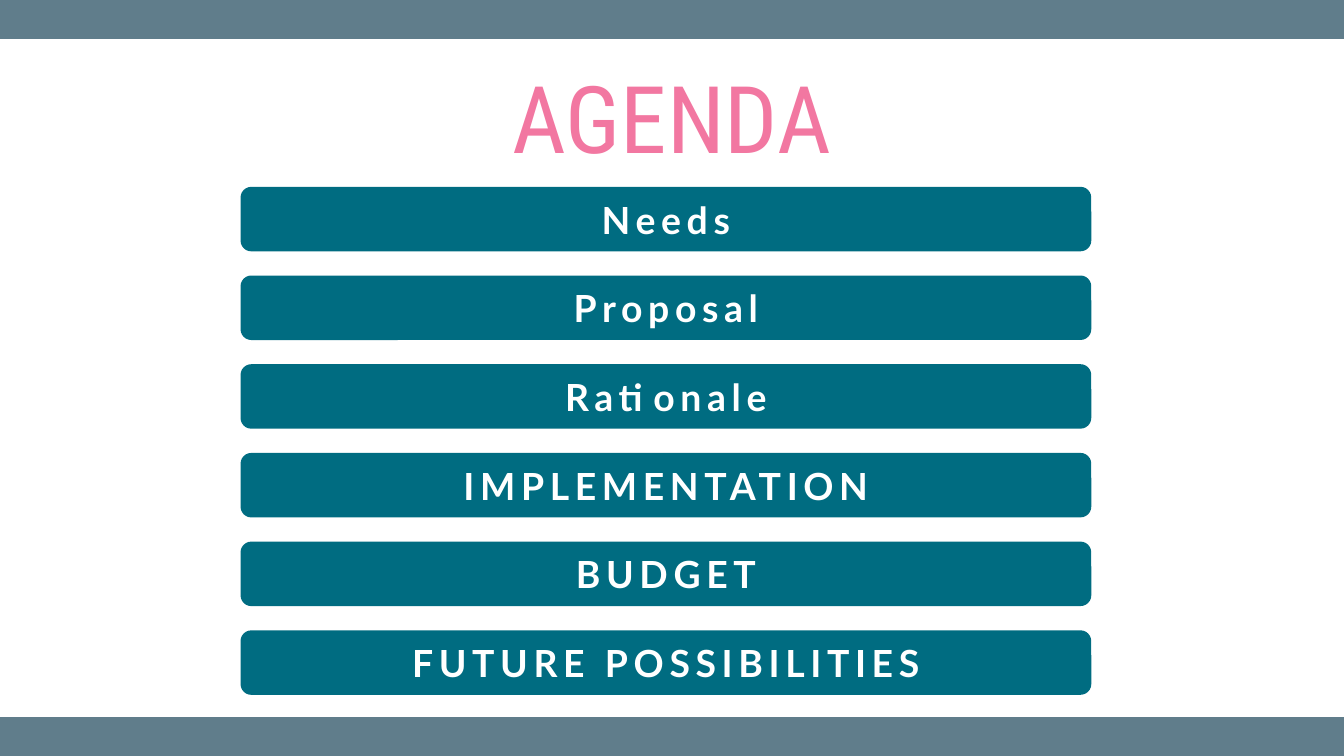
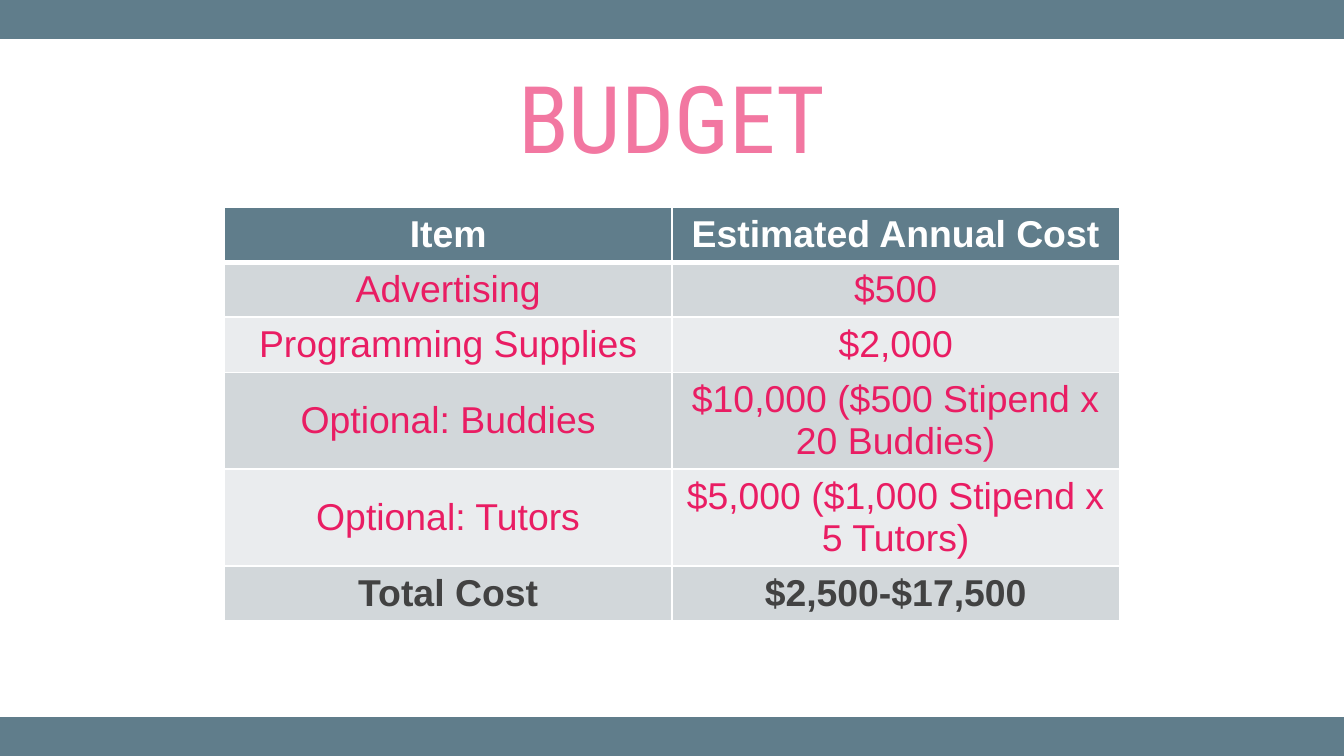
from dataclasses import dataclass

from lxml import etree
from pptx import Presentation, util as u
from pptx.dml.color import RGBColor
from pptx.enum import shapes, text
from pptx.oxml.ns import qn

AGENDA = ["Needs", "Proposal", "Rationale", "IMPLEMENTATION", "BUDGET",
          "FUTURE POSSIBILITIES"]
COSTS = [
    ("Item", "Estimated Annual Cost"),
    ("Advertising", "$500"),
    ("Programming Supplies", "$2,000"),
    ("Optional: Buddies", "$10,000 ($500 Stipend x 20 Buddies)"),
    ("Optional: Tutors", "$5,000 ($1,000 Stipend x 5 Tutors)"),
    ("Total Cost", "$2,500-$17,500"),
]


@dataclass(frozen=True)
class Theme:
    slate: str = "607D8B"
    teal: str = "006C81"
    pink: str = "F277A1"
    rose: str = "E91D63"
    dark: str = "424242"
    white: str = "FFFFFF"
    odd: str = "D2D7DA"
    even: str = "EAECEE"
    head: str = "Roboto Condensed"
    label: str = "Lato"
    body: str = "Arial"
    big: int = 50
    mid: int = 20


T = Theme()
WIDE = 10
HIGH = WIDE * 9 / 16
BAND = 0.29
TITLE = (0.34, BAND, 9.32, 1.09)
BAR = (1.79, 1.39, 6.33, 0.48)
PITCH = 0.66
GRID = (1.67, 1.54, 6.66)
ROW = 0.41


def paint(fill, color):
    fill.solid()
    fill.fore_color.rgb = RGBColor.from_string(color)


def write(frame, words, font=T.body, size=T.mid, color=T.white, bold=False,
          gap=0, anchor=None):
    """Fill a text frame with one centred run; gap is letter spacing in points."""
    para = frame.paragraphs[0]
    para.alignment = text.PP_ALIGN.CENTER
    run = para.add_run()
    run.text = words
    run.font.name, run.font.size, run.font.bold = font, u.Pt(size), bold
    run.font.color.rgb = RGBColor.from_string(color)
    if gap:
        run._r.get_or_add_rPr().set("spc", str(gap * 100))
    if anchor is not None:
        frame.vertical_anchor = anchor


def block(slide, kind, box, color):
    shape = slide.shapes.add_shape(kind, *map(u.Inches, box))
    shape.shadow.inherit = False
    paint(shape.fill, color)
    shape.line.fill.background()
    return shape


def start(deck, words):
    """Add a slide with its title and the two bands."""
    slide = deck.slides.add_slide(deck.slide_layouts[5])
    title = slide.shapes.title
    title.left, title.top, title.width, title.height = map(u.Inches, TITLE)
    frame = title.text_frame
    frame.word_wrap = True
    frame.auto_size = text.MSO_AUTO_SIZE.NONE
    frame.margin_left = frame.margin_right = u.Inches(0.1)
    frame.margin_top = frame.margin_bottom = u.Inches(0.1)
    write(frame, words, font=T.head, size=T.big, color=T.pink,
          anchor=text.MSO_ANCHOR.BOTTOM)
    for top in (0, HIGH - BAND):
        block(slide, shapes.MSO_SHAPE.RECTANGLE, (0, top, WIDE, BAND), T.slate)
    return slide


def edge(cell, **sides):
    """Draw white cell borders; each side gives its width in points."""
    props = cell._tc.get_or_add_tcPr()
    for side, width in sides.items():
        line = etree.SubElement(props, qn("a:ln" + side), w=str(u.Pt(width)))
        fill = etree.SubElement(line, qn("a:solidFill"))
        etree.SubElement(fill, qn("a:srgbClr"), val=T.white)


def agenda(deck):
    slide = start(deck, "AGENDA")
    left, top, wide, high = BAR
    for i, words in enumerate(AGENDA):
        bar = block(slide, shapes.MSO_SHAPE.ROUNDED_RECTANGLE,
                    (left, top + i * PITCH, wide, high), T.teal)
        write(bar.text_frame, words, font=T.label, bold=True, gap=3,
              anchor=text.MSO_ANCHOR.MIDDLE)


def budget(deck):
    slide = start(deck, "BUDGET")
    count, last = len(COSTS), len(COSTS) - 1
    table = slide.shapes.add_table(
        count, 2, *map(u.Inches, (*GRID, ROW * count))).table
    for r, row in enumerate(COSTS):
        table.rows[r].height = u.Inches(ROW)
        back = T.slate if r == 0 else T.odd if r % 2 else T.even
        ink = {0: T.white, last: T.dark}.get(r, T.rose)
        for c, words in enumerate(row):
            cell = table.cell(r, c)
            edge(cell, L=1, R=1, T=3 if r == 1 else 1, B=3 if r == 0 else 1)
            paint(cell.fill, back)
            write(cell.text_frame, words, color=ink, bold=r in (0, last))
            if words.startswith("Optional") or "Tutors" in words:
                cell.vertical_anchor = text.MSO_ANCHOR.MIDDLE


def main():
    deck = Presentation()
    deck.slide_width, deck.slide_height = u.Inches(WIDE), u.Inches(HIGH)
    agenda(deck)
    budget(deck)
    deck.save("out.pptx")


if __name__ == "__main__":
    main()
